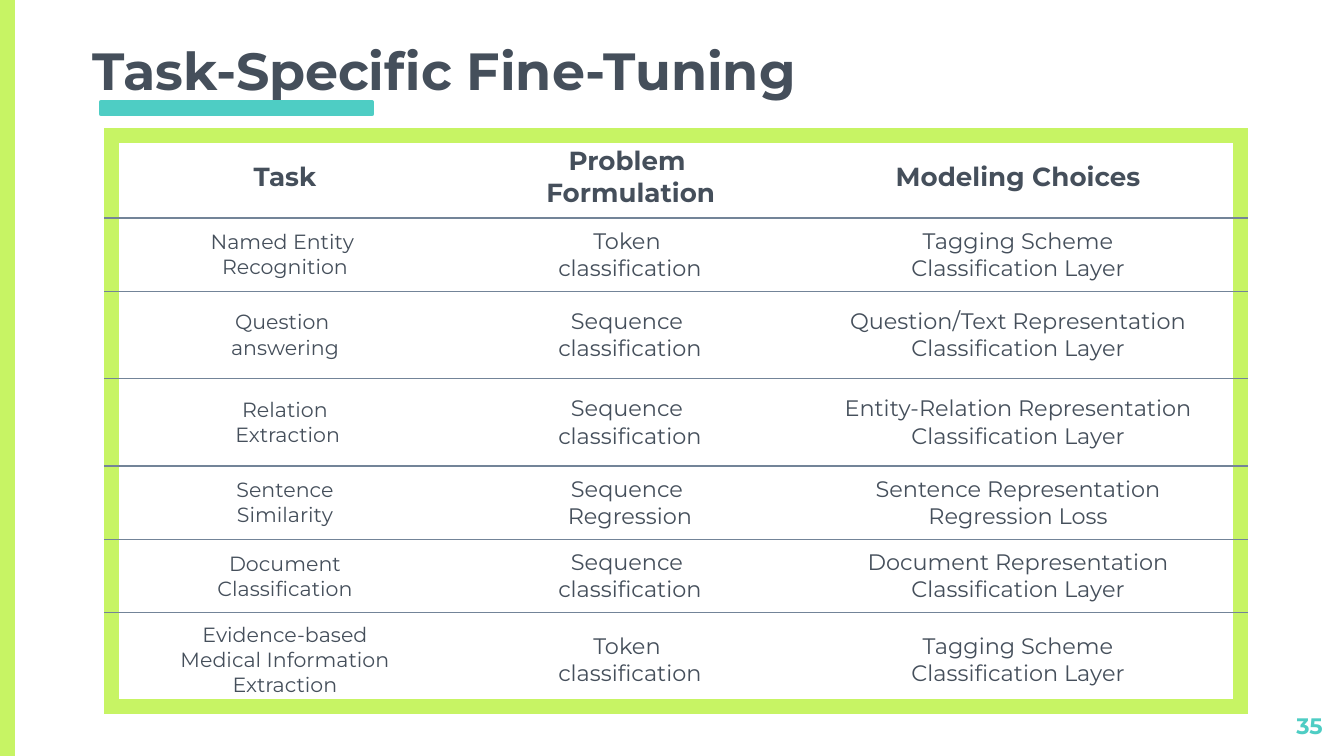
"""Build the task-specific fine-tuning slide."""
from copy import deepcopy
from dataclasses import dataclass

from lxml import etree
from pptx import Presentation
from pptx.dml.color import RGBColor
from pptx.enum import shapes, text
from pptx.oxml import ns
from pptx.util import Pt

LIME, TEAL, INK, RULE = "C7F464", "4ECDC4", "454F5B", "738498"
COLS = [185.8, 180.7, 238.3]
ROWS = [32.4, 34.6, 46.8, 46.8, 34.6, 34.6, 43.9]
HEAD = ["Task", "Problem\n Formulation", "Modeling Choices"]


@dataclass
class Bar:
    left: float
    top: float
    width: float
    height: float
    color: str
    line: float = 0


@dataclass
class Task:
    name: str
    form: str
    model: str


BARS = [
    Bar(0, 0, 8, 405, LIME),
    Bar(54, 54.7, 145.4, 6.5, TEAL, 2),
]
TASKS = [
    Task("Named Entity \nRecognition", "Token\n classification",
         "Tagging Scheme\nClassification Layer"),
    Task("Question \nanswering", "Sequence\n classification",
         "Question/Text Representation\nClassification Layer"),
    Task("Relation\n Extraction", "Sequence\n classification",
         "Entity-Relation Representation\nClassification Layer"),
    Task("Sentence\nSimilarity", "Sequence\n Regression",
         "Sentence Representation\nRegression Loss"),
    Task("Document\nClassification", "Sequence\n classification",
         "Document Representation\nClassification Layer"),
    Task("Evidence-based\nMedical Information\nExtraction", "Token\n classification",
         "Tagging Scheme\nClassification Layer"),
]


def paint(form, color: str) -> None:
    """Give a fill, line or font format a solid colour."""
    if hasattr(form, "solid"):
        form.solid()
        form = form.fore_color
    else:
        form = form.color
    form.rgb = RGBColor.from_string(color)


def put(frame, words: str, size: float = 12, color: str = INK, bold: bool = False,
        align=text.PP_ALIGN.CENTER, space: float = 0) -> None:
    """Write one formatted paragraph, with line breaks at newlines."""
    frame.word_wrap = True
    para = frame.paragraphs[0]
    para.text = words.replace("\n", "\v")
    para.alignment = align
    para.space_before = para.space_after = Pt(space)
    for run in para.runs:
        run.font.name, run.font.size, run.font.bold = "Montserrat", Pt(size), bold
        paint(run.font, color)
    for gap in para._p.findall(ns.qn("a:br")):
        gap.insert(0, deepcopy(para.runs[0]._r.rPr))


def inset(frame, side: float = 7.2, end: float = 7.2) -> None:
    """Set the inner margins of a text frame or cell."""
    frame.margin_left = frame.margin_right = Pt(side)
    frame.margin_top = frame.margin_bottom = Pt(end)


def draw_bar(slide, bar: Bar) -> None:
    """Draw one plain rectangle."""
    shape = slide.shapes.add_shape(shapes.MSO_SHAPE.RECTANGLE, Pt(bar.left),
                                   Pt(bar.top), Pt(bar.width), Pt(bar.height))
    shape.shadow.inherit = False
    paint(shape.fill, bar.color)
    if bar.line:
        shape.line.width = Pt(bar.line)
        paint(shape.line, bar.color)
    else:
        shape.line.fill.background()


def edge(cell, sides: dict) -> None:
    """Set the four cell borders: outer lime, inner rule, or none."""
    props = cell._tc.get_or_add_tcPr()
    for spot, (side, color) in enumerate(sides.items()):
        line = etree.Element(ns.qn(f"a:ln{side}"))
        if color:
            line.set("w", str(Pt(9 if color == LIME else 0.75)))
            fill = etree.SubElement(line, ns.qn("a:solidFill"))
            etree.SubElement(fill, ns.qn("a:srgbClr"), val=color)
        else:
            etree.SubElement(line, ns.qn("a:noFill"))
        props.insert(spot, line)


def draw_table(slide) -> None:
    """Draw the table of tasks inside its frame."""
    table = slide.shapes.add_table(len(ROWS), len(COLS), Pt(59.8), Pt(72.7),
                                   Pt(sum(COLS)), Pt(sum(ROWS))).table
    table.first_row = table.horz_banding = False
    for col, width in zip(table.columns, COLS):
        col.width = Pt(width)
    for row, height in zip(table.rows, ROWS):
        row.height = Pt(height)
    grid = [HEAD] + [[task.name, task.form, task.model] for task in TASKS]
    for r, line in enumerate(grid):
        for c, words in enumerate(line):
            cell = table.cell(r, c)
            inset(cell, 7.2, 5)
            cell.vertical_anchor = text.MSO_ANCHOR.MIDDLE
            cell.fill.background()
            size = 14 if r == 0 else 11 if c == 0 else 12
            put(cell.text_frame, words, size=size, bold=r == 0)
            edge(cell, {
                "L": LIME if c == 0 else None,
                "R": LIME if c == len(COLS) - 1 else None,
                "T": LIME if r == 0 else RULE,
                "B": LIME if r == len(ROWS) - 1 else RULE,
            })


def main() -> None:
    """Build and save the slide."""
    deck = Presentation()
    deck.slide_width, deck.slide_height = Pt(720), Pt(405)
    slide = deck.slides.add_slide(deck.slide_layouts[5])
    title = slide.shapes.title
    title.left, title.top, title.width, title.height = Pt(42.5), Pt(22.3), Pt(611.3), Pt(38.9)
    frame = title.text_frame
    frame.auto_size = text.MSO_AUTO_SIZE.NONE
    frame.vertical_anchor = text.MSO_ANCHOR.BOTTOM
    inset(frame)
    put(frame, "Task-Specific Fine-Tuning", size=28, bold=True,
        align=text.PP_ALIGN.LEFT, space=6)
    for bar in BARS:
        draw_bar(slide, bar)
    draw_table(slide)
    page = slide.shapes.add_textbox(Pt(672.5), Pt(374.4), Pt(43.2), Pt(24.5)).text_frame
    inset(page)
    put(page, "35", color=TEAL, bold=True, align=text.PP_ALIGN.RIGHT)
    deck.save("out.pptx")


if __name__ == "__main__":
    main()
